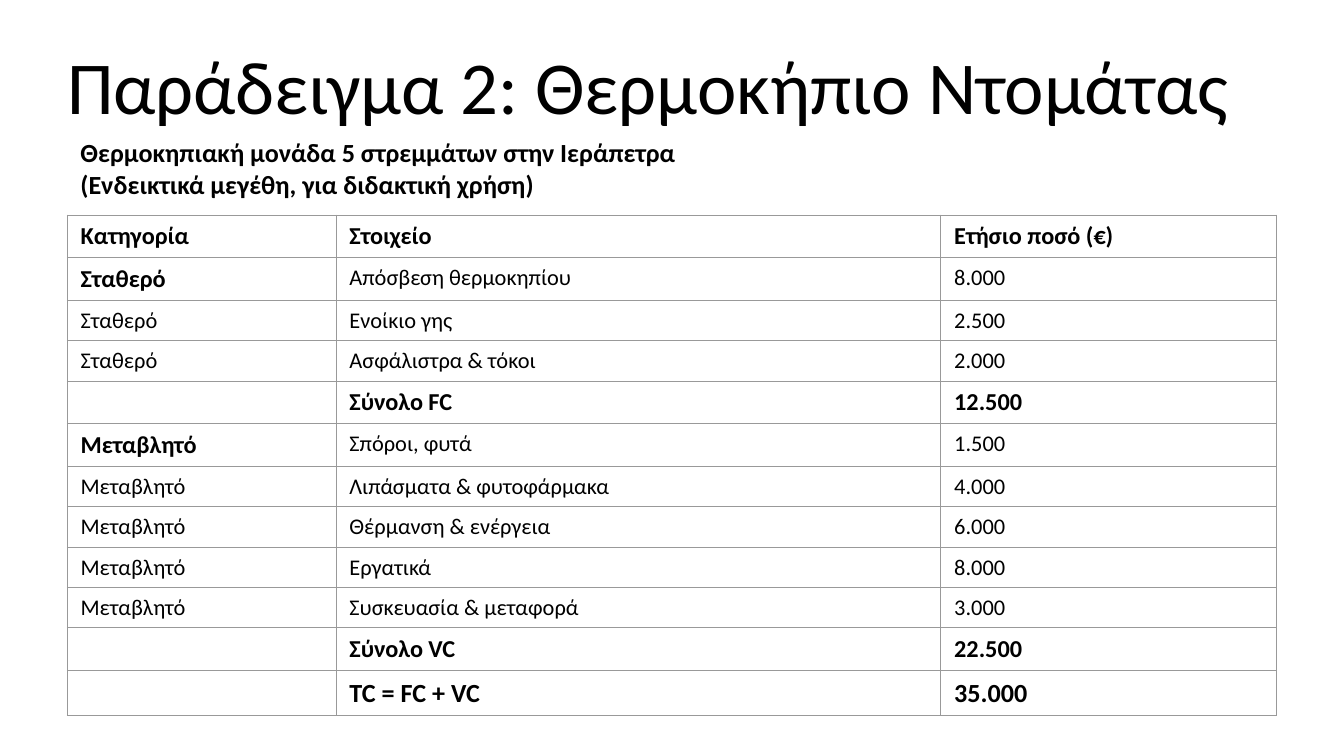
from typing import NamedTuple

from lxml import etree
from pptx import Presentation
from pptx.dml.color import RGBColor
from pptx.enum import text
from pptx.oxml import ns
from pptx.util import Pt

PX = 5715  # EMU per px, 160 px to the inch
FONT = "Calibri"
INK = "000000"
GRID = "999999"
BODY_SIZE, STRONG_SIZE, GRAND_TOTAL_SIZE = 12, 13, 14
ROW_HEIGHT = 43
COLUMN_WIDTHS = (320, 720, 400)


class Box(NamedTuple):
    left: int
    top: int
    width: int
    height: int

    def emu(self) -> list[int]:
        return [length * PX for length in self]


class Entry(NamedTuple):
    category: str
    item: str
    amount: str
    strong_category: bool = False
    strong_amount: bool = False
    strong_size: int = STRONG_SIZE


ENTRIES = (
    Entry("Κατηγορία", "Στοιχείο", "Ετήσιο ποσό (€)", True, True),
    Entry("Σταθερό", "Απόσβεση θερμοκηπίου", "8.000", True),
    Entry("Σταθερό", "Ενοίκιο γης", "2.500"),
    Entry("Σταθερό", "Ασφάλιστρα & τόκοι", "2.000"),
    Entry("", "Σύνολο FC", "12.500", strong_amount=True),
    Entry("Μεταβλητό", "Σπόροι, φυτά", "1.500", True),
    Entry("Μεταβλητό", "Λιπάσματα & φυτοφάρμακα", "4.000"),
    Entry("Μεταβλητό", "Θέρμανση & ενέργεια", "6.000"),
    Entry("Μεταβλητό", "Εργατικά", "8.000"),
    Entry("Μεταβλητό", "Συσκευασία & μεταφορά", "3.000"),
    Entry("", "Σύνολο VC", "22.500", strong_amount=True),
    Entry("", "TC = FC + VC", "35.000", strong_amount=True,
          strong_size=GRAND_TOTAL_SIZE),
)


def color(hex_code: str) -> RGBColor:
    return RGBColor.from_string(hex_code)


def write(frame, *lines: str, size: int, bold: bool = False) -> None:
    """Put each line in its own paragraph; an empty line keeps the size."""
    for index, line in enumerate(lines):
        paragraph = frame.paragraphs[0] if index == 0 else frame.add_paragraph()
        if not line:
            etree.SubElement(paragraph._p, ns.qn("a:endParaRPr"), sz=str(size * 100))
            continue
        run = paragraph.add_run()
        run.text = line
        run.font.name = FONT
        run.font.size = Pt(size)
        run.font.bold = bold
        run.font.color.rgb = color(INK)


def add_text(slide, box: Box, *lines: str, size: int, bold: bool = False,
             inset: tuple[int, int] = (16, 8),
             anchor=text.MSO_ANCHOR.TOP) -> None:
    frame = slide.shapes.add_textbox(*box.emu()).text_frame
    frame.word_wrap = True
    frame.vertical_anchor = anchor
    frame.margin_left = frame.margin_right = inset[0] * PX
    frame.margin_top = frame.margin_bottom = inset[1] * PX
    write(frame, *lines, size=size, bold=bold)


def style_cell(cell) -> None:
    """Thin grey borders and no fill; borders must precede the fill."""
    properties = cell._tc.get_or_add_tcPr()
    for side in ("lnL", "lnR", "lnT", "lnB"):
        line = etree.SubElement(properties, ns.qn(f"a:{side}"), w=str(Pt(0.5)))
        fill = etree.SubElement(line, ns.qn("a:solidFill"))
        etree.SubElement(fill, ns.qn("a:srgbClr"), val=GRID)
    cell.fill.background()


def add_cost_table(slide, box: Box, entries: tuple[Entry, ...]) -> None:
    holder = slide.shapes.add_table(len(entries), len(COLUMN_WIDTHS), *box.emu())
    table = holder.table
    table.first_row = table.horz_banding = False
    for column, width in zip(table.columns, COLUMN_WIDTHS):
        column.width = width * PX
    for row, entry in zip(table.rows, entries):
        row.height = ROW_HEIGHT * PX
        values = (entry.category, entry.item, entry.amount)
        strengths = (entry.strong_category, entry.strong_amount, entry.strong_amount)
        for cell, value, strong in zip(row.cells, values, strengths):
            size = entry.strong_size if strong else BODY_SIZE
            write(cell.text_frame, value, size=size, bold=strong)
            style_cell(cell)
    holder.height = box.height * PX  # rows grow to fit their text


def main() -> None:
    deck = Presentation()
    deck.slide_width, deck.slide_height = 1600 * PX, 900 * PX
    slide = deck.slides.add_slide(deck.slide_layouts[6])
    add_text(slide, Box(80, 48, 1440, 192), "Παράδειγμα 2: Θερμοκήπιο Ντομάτας",
             size=40, inset=(0, 0))
    add_text(slide, Box(80, 160, 1440, 80),
             "Θερμοκηπιακή μονάδα 5 στρεμμάτων στην Ιεράπετρα",
             "(Ενδεικτικά μεγέθη, για διδακτική χρήση)",
             size=14, bold=True, anchor=text.MSO_ANCHOR.MIDDLE)
    add_cost_table(slide, Box(80, 256, sum(COLUMN_WIDTHS), 595), ENTRIES)
    deck.save("out.pptx")


if __name__ == "__main__":
    main()
